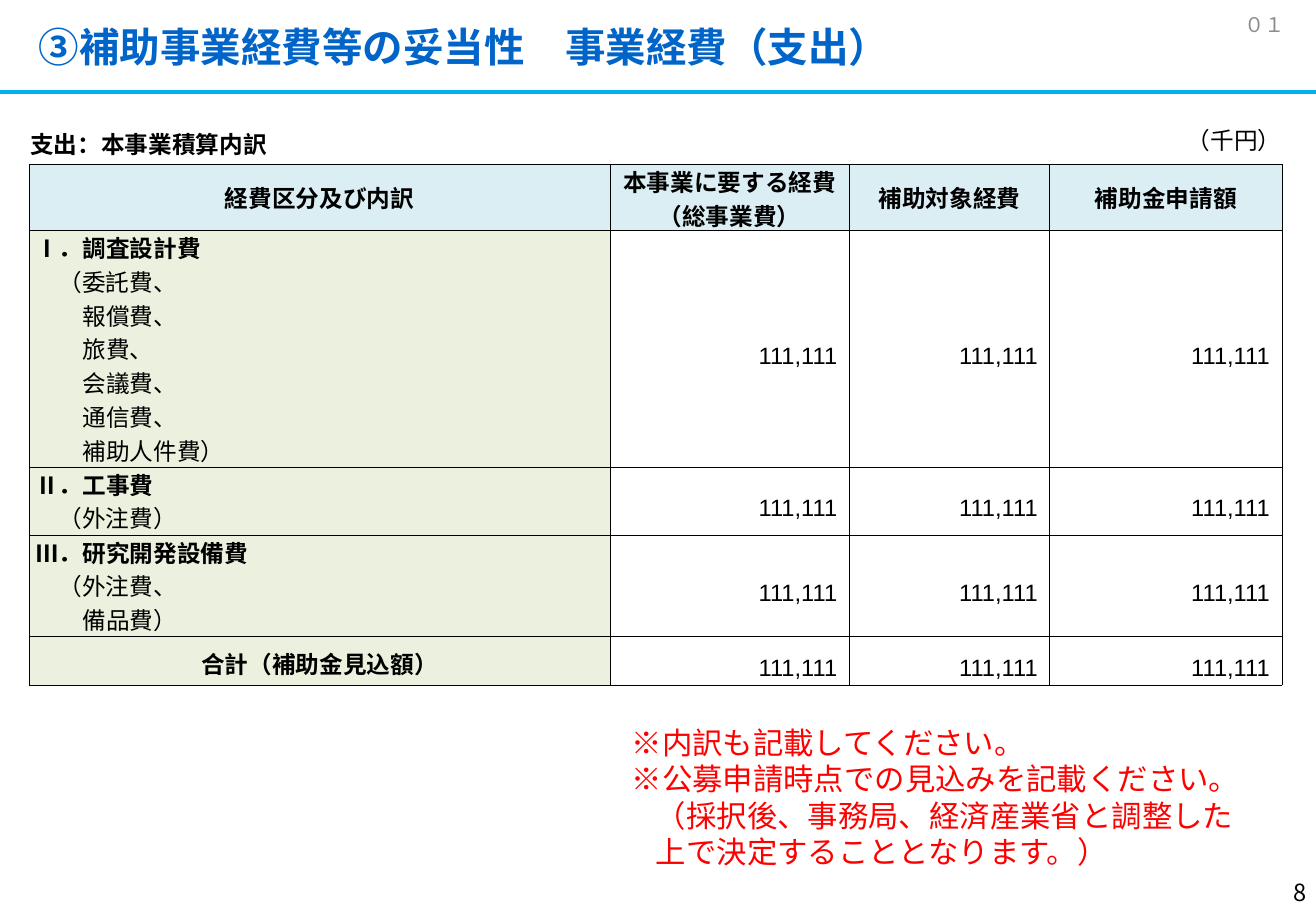
from dataclasses import dataclass

import pptx
import pptx.dml.color
import pptx.enum.shapes
import pptx.enum.text
import pptx.oxml
import pptx.oxml.ns
import pptx.util
from lxml import etree

Inches = pptx.util.Inches
Pt = pptx.util.Pt
ALIGN = pptx.enum.text.PP_ALIGN
ANCHOR = pptx.enum.text.MSO_ANCHOR
qn = pptx.oxml.ns.qn


@dataclass(frozen=True)
class Theme:
    sans: str = "Noto Sans CJK JP"
    table_latin: str = "Arial"
    black: str = "000000"
    title: str = "0064C8"
    rule: str = "00B0F0"
    grey: str = "8C8C8C"
    red: str = "FF0000"
    header_fill: str = "DBEEF4"
    category_fill: str = "EBF1DE"
    amount_fill: str = "FFFFFF"
    title_size: int = 24
    note_size: int = 18
    body_size: int = 14
    mark_size: int = 12


THEME = Theme()
HEADINGS = [["経費区分及び内訳"], ["本事業に要する経費", "（総事業費）"], ["補助対象経費"], ["補助金申請額"]]
CATEGORIES = [
    ("Ⅰ．調査設計費", ["（委託費、", "報償費、", "旅費、", "会議費、", "通信費、", "補助人件費）"]),
    ("Ⅱ．工事費", ["（外注費）"]),
    ("Ⅲ．研究開発設備費", ["（外注費、", "備品費）"]),
]
TOTAL = "合計（補助金見込額）"
AMOUNT = "111,111"
COLUMN_WIDTHS = [4.78, 1.97, 1.65, 1.91]
ROW_HEIGHTS = [0.55, 1.94, 0.56, 0.83, 0.4]


def rgb(color):
    return pptx.dml.color.RGBColor.from_string(color)


def add_run(paragraph, text, size, color=THEME.black, bold=False, latin=THEME.sans):
    run = paragraph.add_run()
    run.text = text
    run.font.size = Pt(size)
    run.font.bold = bold
    run.font.color.rgb = rgb(color)
    run.font.name = latin
    east_asian = etree.SubElement(run.font._element, qn("a:ea"))
    east_asian.set("typeface", THEME.sans)


def indent(paragraph, left, first=0):
    properties = paragraph._p.get_or_add_pPr()
    properties.set("marL", str(Inches(left)))
    properties.set("indent", str(Inches(first)))


def add_label(slide, box, lines, size, color=THEME.black, bold=False,
              align=ALIGN.LEFT, anchor=ANCHOR.TOP, hanging=0):
    frame = slide.shapes.add_textbox(*map(Inches, box)).text_frame
    frame.word_wrap = True
    frame.vertical_anchor = anchor
    for index, line in enumerate(lines):
        paragraph = frame.add_paragraph() if index else frame.paragraphs[0]
        paragraph.alignment = align
        if index:
            indent(paragraph, hanging, -hanging)
        add_run(paragraph, line, size, color, bold)


def add_header(slide, box):
    left, top, width, height = box
    add_label(slide, (left + 0.22, top + 0.13, 10.4, 0.5), ["③補助事業経費等の妥当性　事業経費（支出）"],
              THEME.title_size, THEME.title, True, anchor=ANCHOR.MIDDLE)
    add_label(slide, (left + 10.14, top, 0.69, 0.4), ["０１"],
              THEME.mark_size, THEME.grey, anchor=ANCHOR.MIDDLE)
    bottom = top + height
    rule = slide.shapes.add_connector(
        pptx.enum.shapes.MSO_CONNECTOR.STRAIGHT,
        Inches(left), Inches(bottom), Inches(left + width), Inches(bottom))
    rule.line.color.rgb = rgb(THEME.rule)
    rule.line.width = Pt(2.25)
    etree.SubElement(rule._element.spPr, qn("a:effectLst"))


def style_cell(cell, fill):
    properties = cell._tc.get_or_add_tcPr()
    for side in ("lnL", "lnR", "lnT", "lnB"):
        border = etree.SubElement(properties, qn("a:" + side), w=str(Pt(0.5)))
        paint = etree.SubElement(border, qn("a:solidFill"))
        etree.SubElement(paint, qn("a:srgbClr"), val=THEME.black)
    cell.fill.solid()
    cell.fill.fore_color.rgb = rgb(fill)
    cell.margin_left = cell.margin_right = Inches(0.05)
    cell.margin_top = cell.margin_bottom = 0


def write_cell(cell, fill, lines, align, spacing=None, anchor=ANCHOR.MIDDLE):
    style_cell(cell, fill)
    cell.vertical_anchor = anchor
    frame = cell.text_frame
    for index, (text, bold, left) in enumerate(lines):
        paragraph = frame.add_paragraph() if index else frame.paragraphs[0]
        paragraph.alignment = align
        if spacing:
            paragraph.line_spacing = Pt(spacing)
        indent(paragraph, left)
        add_run(paragraph, text, THEME.body_size, bold=bold, latin=THEME.table_latin)


def add_expense_table(slide, box):
    table = slide.shapes.add_table(len(ROW_HEIGHTS), len(COLUMN_WIDTHS), *map(Inches, box)).table
    table.first_row = table.horz_banding = False
    for column, width in zip(table.columns, COLUMN_WIDTHS):
        column.width = Inches(width)
    for row, height in zip(table.rows, ROW_HEIGHTS):
        row.height = Inches(height)

    for column, heading in enumerate(HEADINGS):
        write_cell(table.cell(0, column), THEME.header_fill,
                   [(line, True, 0) for line in heading], ALIGN.CENTER)

    for row, (category, items) in enumerate(CATEGORIES, 1):
        lines = [(category, True, 0)]
        lines += [(item, False, 0.39 if index else 0.19) for index, item in enumerate(items)]
        write_cell(table.cell(row, 0), THEME.category_fill, lines, ALIGN.JUSTIFY, 20, ANCHOR.TOP)

    total = table.cell(len(CATEGORIES) + 1, 0)
    write_cell(total, THEME.category_fill, [(TOTAL, True, 0)], ALIGN.CENTER, 17)
    total.margin_top = Pt(6)

    for row in range(1, len(ROW_HEIGHTS)):
        for column in range(1, len(COLUMN_WIDTHS)):
            amount = table.cell(row, column)
            write_cell(amount, THEME.amount_fill, [(AMOUNT, False, 0)], ALIGN.RIGHT, 24)
            amount.margin_right = Inches(0.1)


def add_expenses(slide, box):
    left, top, width, height = box
    add_label(slide, (left - 0.09, top, 3.72, 0.34), ["支出：本事業積算内訳"], THEME.body_size, bold=True)
    add_label(slide, (left + 9.43, top - 0.03, 1.13, 0.34), ["（千円）"], THEME.body_size)
    add_expense_table(slide, (left, top + 0.33, width, height - 0.33))


def add_footer(slide, box):
    left, top, width, height = box
    add_label(slide, (left + 5.1, top, 5.34, 1.31),
              ["※内訳も記載してください。",
               "※公募申請時点での見込みを記載ください。（採択後、事務局、経済産業省と調整した上で決定することとなります。）"],
              THEME.note_size, THEME.red, hanging=0.2)
    add_label(slide, (left + width - 2.51, top + height - 0.36, 2.53, 0.4), ["8"],
              THEME.body_size, align=ALIGN.RIGHT, anchor=ANCHOR.MIDDLE)


def main():
    presentation = pptx.Presentation()
    presentation.slide_width = Inches(10.83)
    presentation.slide_height = Inches(7.5)
    slide = presentation.slides.add_slide(presentation.slide_layouts[6])
    add_header(slide, (0, 0, 10.83, 0.76))
    add_expenses(slide, (0.24, 1.02, 10.31, 4.61))
    add_footer(slide, (0, 5.91, 10.83, 1.59))
    presentation.save("out.pptx")


if __name__ == "__main__":
    main()
